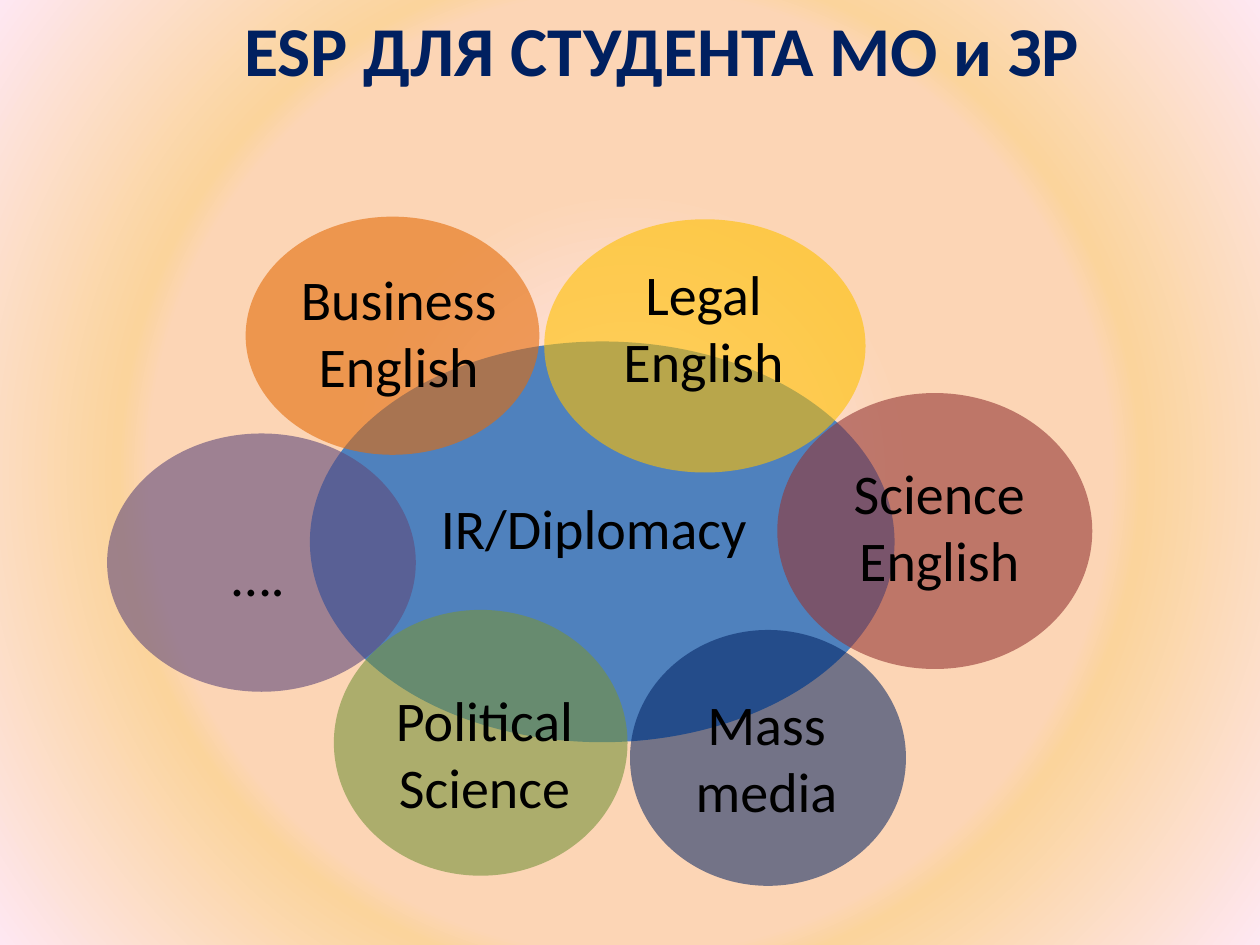
from lxml import etree
from pptx import Presentation
from pptx.dml.color import RGBColor
from pptx.enum.shapes import MSO_SHAPE
from pptx.enum.text import MSO_ANCHOR, MSO_AUTO_SIZE, PP_ALIGN
from pptx.oxml.ns import qn
from pptx.util import Pt

OVAL = MSO_SHAPE.OVAL
LEFT, CENTER = PP_ALIGN.LEFT, PP_ALIGN.CENTER
TOP, MIDDLE = MSO_ANCHOR.TOP, MSO_ANCHOR.MIDDLE
GROW = MSO_AUTO_SIZE.SHAPE_TO_FIT_TEXT

TITLE = " ESP ДЛЯ СТУДЕНТА МО и ЗР"
TITLE_BOX = (-14.4, 0, 776.2, 55.4)
TITLE_FONT = {"name": "Calibri", "size": Pt(40), "bold": True}
LABEL_FONT = {"name": "Calibri", "size": Pt(32), "bold": False}

GLOW = [
    (0, "FBEAC7", 68),
    (0, "FEE7F2", 55),
    (36, "FCD5B5", 100),
    (61, "FCD5B5", 100),
    (65, "FBD49C", 72),
    (100, "FEE7F2", 75),
]

TOPICS = [
    (["IR/Diplomacy"], "4F81BD", 100, LEFT,
     (177.1, 195.1, 334.1, 229), (244.8, 278.6, 196.6, 46.1)),
    (["Legal", "English"], "FFC000", 60, CENTER,
     (311, 125.3, 183.6, 144.7), (329, 144.7, 146.2, 83.5)),
    (["Business", "English"], "E46C0A", 60, CENTER,
     (140.4, 123.8, 167.8, 136.1), (129.6, 147.6, 196.6, 85)),
    (["Science", "English"], "953735", 60, CENTER,
     (444.2, 224.6, 180, 157.7), (438.5, 258.5, 196.6, 85)),
    (["Political", "Science"], "77933C", 60, CENTER,
     (190.8, 348.5, 167.8, 151.9), (182.2, 388.1, 189.4, 74.2)),
    (["…."], "604A7B", 60, CENTER,
     (61.2, 247.7, 176.4, 147.6), (56.2, 305.3, 182.9, 43.2)),
    (["Mass", "media"], "002060", 54, CENTER,
     (360, 360, 157.7, 146.2), (339.8, 390.2, 196.6, 85)),
]


def color(hex_code):
    return RGBColor.from_string(hex_code)


def points(box):
    return [Pt(length) for length in box]


def add_alpha(color_element, percent):
    if percent < 100:
        etree.SubElement(color_element, qn("a:alpha"), val=str(percent * 1000))


def paint_background(slide):
    slide.background.fill.solid()
    properties = slide.element.find(".//" + qn("p:bgPr"))
    properties.remove(properties[0])
    gradient = etree.Element(qn("a:gradFill"), rotWithShape="1")
    stops = etree.SubElement(gradient, qn("a:gsLst"))
    for position, hex_code, opacity in GLOW:
        stop = etree.SubElement(stops, qn("a:gs"), pos=str(position * 1000))
        add_alpha(etree.SubElement(stop, qn("a:srgbClr"), val=hex_code), opacity)
    circle = etree.SubElement(gradient, qn("a:path"), path="circle")
    etree.SubElement(circle, qn("a:fillToRect"),
                     {side: "50000" for side in "ltrb"})
    properties.insert(0, gradient)


def add_oval(shapes, box, hex_code, opacity):
    oval = shapes.add_shape(OVAL, *points(box))
    oval.shadow.inherit = False
    oval.fill.solid()
    oval.fill.fore_color.rgb = color(hex_code)
    add_alpha(oval.element.spPr.find(".//" + qn("a:srgbClr")), opacity)
    oval.line.fill.background()


def add_text(shapes, box, lines, font, hex_code, align, anchor):
    frame = shapes.add_textbox(*points(box)).text_frame
    layout = {"word_wrap": True, "auto_size": GROW, "vertical_anchor": anchor}
    for name, value in layout.items():
        setattr(frame, name, value)
    frame.text = "\n".join(lines)
    for paragraph in frame.paragraphs:
        paragraph.alignment = align
        for run in paragraph.runs:
            for name, value in font.items():
                setattr(run.font, name, value)
            run.font.color.rgb = color(hex_code)


def main():
    deck = Presentation()
    deck.slide_width, deck.slide_height = Pt(720), Pt(540)
    slide = deck.slides.add_slide(deck.slide_layouts[6])
    paint_background(slide)
    for lines, fill, opacity, align, oval_box, label_box in TOPICS:
        topic = slide.shapes.add_group_shape().shapes
        add_oval(topic, oval_box, fill, opacity)
        add_text(topic, label_box, lines, LABEL_FONT, "000000", align, TOP)
    add_text(slide.shapes, TITLE_BOX, [TITLE], TITLE_FONT, "002060", CENTER, MIDDLE)
    deck.save("out.pptx")


if __name__ == "__main__":
    main()
